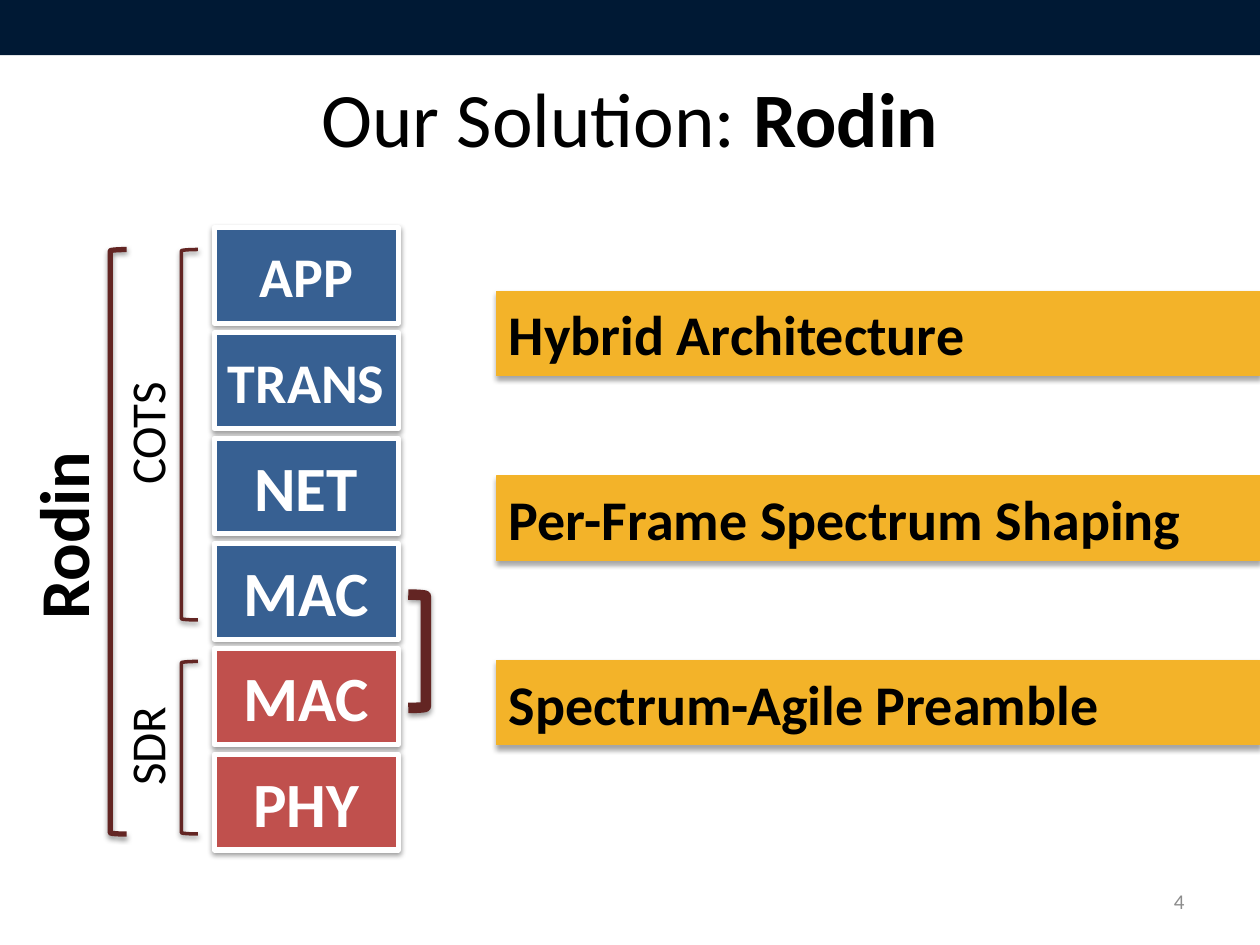
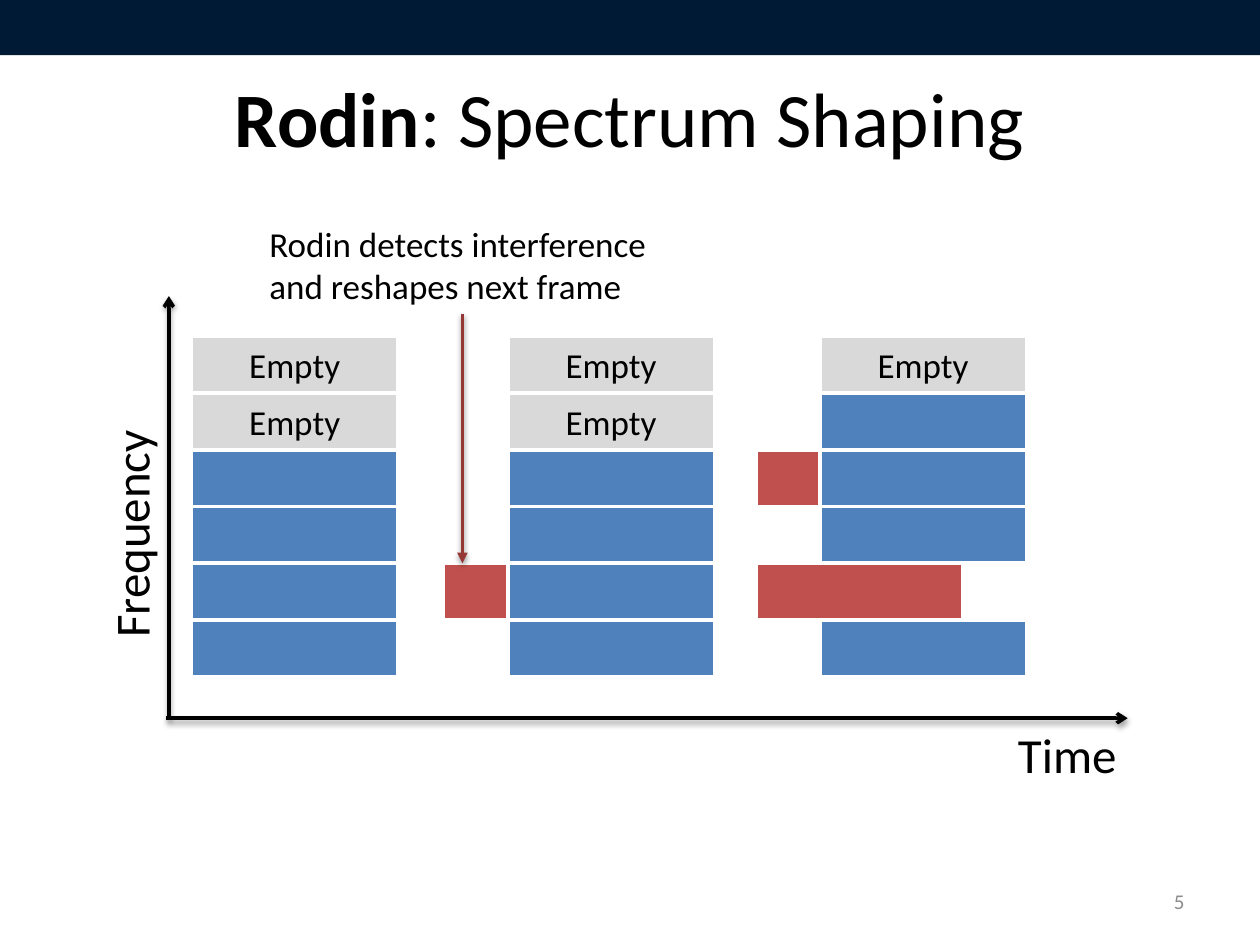
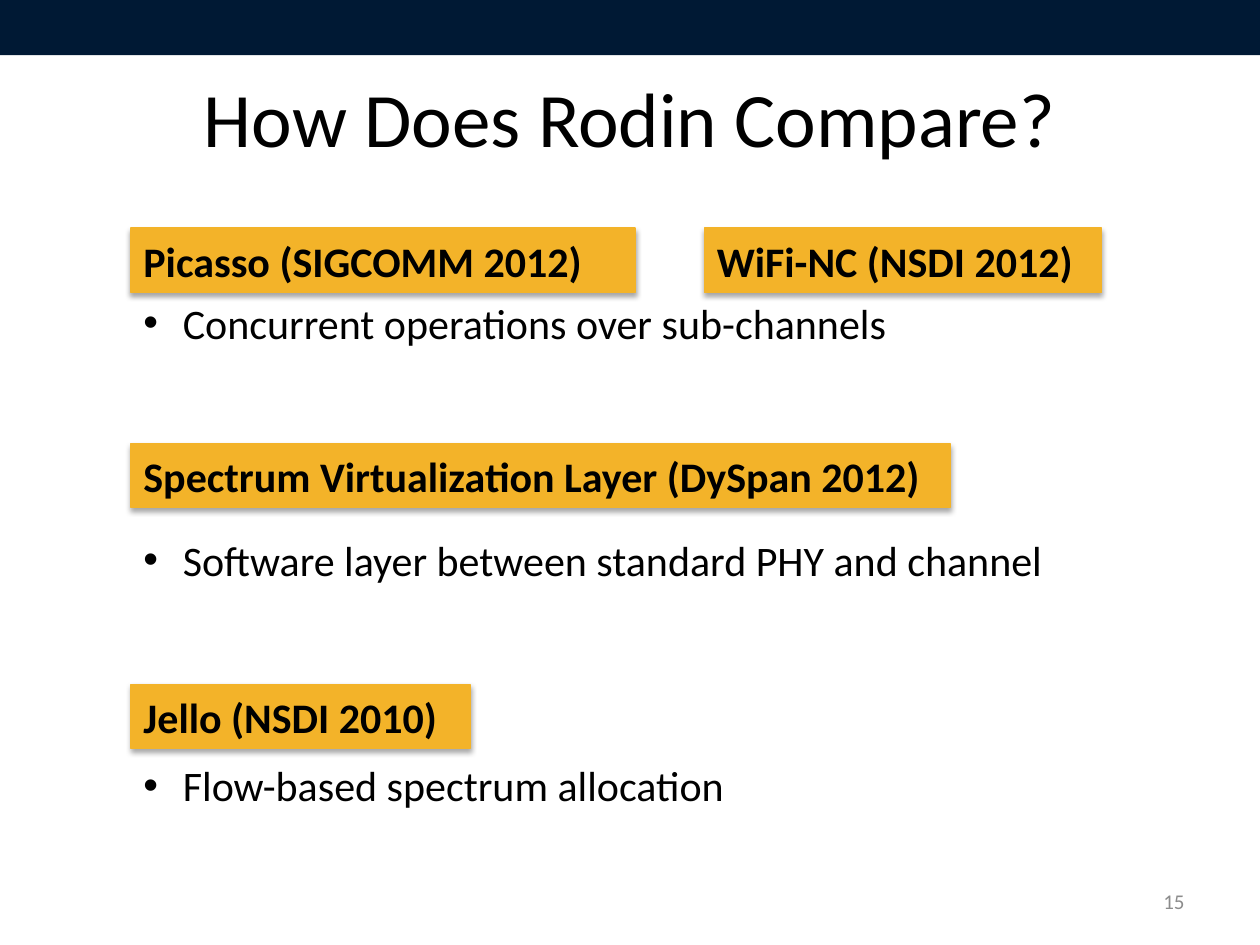
from lxml import etree
from pptx import Presentation
from pptx.dml.color import RGBColor
from pptx.enum import shapes, text
from pptx.oxml.ns import qn
from pptx.util import Pt

FONT = "Calibri"
BLACK, WHITE, GREY = "000000", "FFFFFF", "8C8C8C"
NAVY, GOLD, MAROON, ARROW_RED = "001934", "F3B329", "632523", "953735"
LAYER_BLUE, BLOCK_BLUE, RED, EMPTY_GREY = "376092", "4F81BD", "C0504D", "D9D9D9"
SHAPE = shapes.MSO_SHAPE
LEFT, CENTER, RIGHT = text.PP_ALIGN.LEFT, text.PP_ALIGN.CENTER, text.PP_ALIGN.RIGHT


def rgb(color):
    return RGBColor.from_string(color)


def style_runs(paragraph, size, color=BLACK, bold=False):
    for run in paragraph.runs:
        run.font.name = FONT
        run.font.size = Pt(size)
        run.font.bold = bold
        run.font.color.rgb = rgb(color)


def cast_shadow(item, opacity=38, distance=1.6):
    """Put a soft shadow straight below a shape or connector."""
    properties = item._element.spPr
    effects = properties.find(qn("a:effectLst"))
    if effects is None:
        effects = etree.SubElement(properties, qn("a:effectLst"))
    shadow = etree.SubElement(
        effects, qn("a:outerShdw"), blurRad=str(Pt(3.1)), dist=str(Pt(distance)),
        dir="5400000", rotWithShape="0")
    tint = etree.SubElement(shadow, qn("a:srgbClr"), val=BLACK)
    etree.SubElement(tint, qn("a:alpha"), val=str(opacity * 1000))


def add_outline(slide, kind, place, fill, line, weight):
    shape = slide.shapes.add_shape(kind, *map(Pt, place))
    shape.shadow.inherit = False
    if fill:
        shape.fill.solid()
        shape.fill.fore_color.rgb = rgb(fill)
    else:
        shape.fill.background()
    shape.line.color.rgb = rgb(line)
    shape.line.width = Pt(weight)
    return shape


def add_block(slide, place, fill, line=WHITE, weight=2, words="", size=20,
              color=BLACK, bold=False, align=CENTER):
    block = add_outline(slide, SHAPE.RECTANGLE, place, fill, line, weight)
    if words:
        block.text_frame.text = words
        paragraph = block.text_frame.paragraphs[0]
        paragraph.alignment = align
        style_runs(paragraph, size, color, bold)
    return block


def add_banner(slide, place, words, size):
    banner = add_block(slide, place, GOLD, GOLD, 0.75, words, size, bold=True, align=LEFT)
    cast_shadow(banner, 35, 1.8)


def add_bracket(slide, kind, place, weight):
    cast_shadow(add_outline(slide, kind, place, None, MAROON, weight))


def add_text(slide, place, words, size, color=BLACK, bold=False, align=LEFT,
             wrap=True, middle=False, rotation=0):
    box = slide.shapes.add_textbox(*map(Pt, place))
    box.rotation = rotation
    frame = box.text_frame
    frame.word_wrap = wrap
    if not wrap:
        frame.auto_size = text.MSO_AUTO_SIZE.SHAPE_TO_FIT_TEXT
    if middle:
        frame.vertical_anchor = text.MSO_ANCHOR.MIDDLE
    frame.text = words
    frame.paragraphs[0].alignment = align
    style_runs(frame.paragraphs[0], size, color, bold)
    return box


def add_label(slide, place, words, size=28, bold=False, rotation=270):
    add_text(slide, place, words, size, bold=bold, wrap=False, rotation=rotation)


def add_bullet(slide, place, words):
    paragraph = add_text(slide, place, words, 24).text_frame.paragraphs[0]
    properties = paragraph._p.get_or_add_pPr()
    properties.set("marL", str(Pt(22.5)))
    properties.set("indent", str(-Pt(22.5)))
    etree.SubElement(properties, qn("a:buFont"), typeface="Arial")
    etree.SubElement(properties, qn("a:buChar"), char="•")


def add_arrow(slide, start, end, color, head):
    arrow = slide.shapes.add_connector(
        shapes.MSO_CONNECTOR.STRAIGHT, *map(Pt, start + end))
    arrow.line.color.rgb = rgb(color)
    arrow.line.width = Pt(2)
    etree.SubElement(arrow._element.spPr.find(qn("a:ln")), qn("a:tailEnd"), type=head)
    cast_shadow(arrow)
    return arrow


def start_slide(deck, number, *title_parts):
    """Add a slide with band, title and number; title parts are (words, bold)."""
    slide = deck.slides.add_slide(deck.slide_layouts[6])
    band = add_block(slide, (0, 0, 720, 31.5), NAVY)
    band.line.fill.background()
    title = add_text(slide, (36, 21.6, 648, 90), "", 44, align=CENTER, middle=True)
    paragraph = title.text_frame.paragraphs[0]
    for words, _ in title_parts:
        paragraph.add_run().text = words
    style_runs(paragraph, 44)
    for run, (_, bold) in zip(paragraph.runs, title_parts):
        run.font.bold = bold
    add_text(slide, (516, 500.5, 168, 28.8), str(number), 12, GREY, align=RIGHT, middle=True)
    return slide


def build_solution(deck):
    slide = start_slide(deck, 4, ("Our Solution: ", False), ("Rodin", True))
    layers = [("APP", 32, LAYER_BLUE), ("TRANS", 32, LAYER_BLUE), ("NET", 36, LAYER_BLUE),
              ("MAC", 36, LAYER_BLUE), ("MAC", 36, RED), ("PHY", 36, RED)]
    for row, (name, size, fill) in enumerate(layers):
        layer = add_block(slide, (122.4, 130 + 60.2 * row, 105.2, 54.7), fill,
                          weight=3, words=name, size=size, color=WHITE, bold=True)
        cast_shadow(layer)

    for left, top, height, weight in [(63, 142.6, 334, 3), (103.7, 142.6, 211.7, 2),
                                      (103.7, 378, 98.6, 2)]:
        add_bracket(slide, SHAPE.LEFT_BRACKET, (left, top, 9.4, height), weight)
    add_bracket(slide, SHAPE.RIGHT_BRACKET, (233.3, 339.8, 10, 64.8), 6)
    add_label(slide, (45.4, 225.4, 76.3, 41), "COTS")
    add_label(slide, (52.6, 404.6, 61.9, 41), "SDR")
    add_label(slide, (-20.9, 277.2, 112.3, 55.4), "Rodin", 40, True)

    features = ["Hybrid Architecture", "Per-Frame Spectrum Shaping", "Spectrum-Agile Preamble"]
    for row, feature in enumerate(features):
        add_banner(slide, (283.7, 166.5 + 105.5 * row, 436.3, 48.2), feature, 32)


def build_shaping(deck):
    slide = start_slide(deck, 5, ("Rodin", True), (": Spectrum Shaping", False))

    def add_channel(left, row, fill, words=""):
        add_block(slide, (left, 192.24 + 32.4 * row, 118, 32.4), fill, words=words)

    for left, row in [(253.4, 4), (432, 2), (432, 4)]:
        add_channel(left, row, RED)
    # Each frame lists its channels from the top: E empty, U used, - left out
    frames = [(109.4, "EEUUUU"), (290.2, "EEUUUU"), (468.5, "EUUU-U")]
    for left, channels in frames:
        for row, state in enumerate(channels):
            if state == "E":
                add_channel(left, row, EMPTY_GREY, "Empty")
            elif state == "U":
                add_channel(left, row, BLOCK_BLUE)

    add_arrow(slide, (96.5, 410.4), (96.5, 169.2), BLACK, "arrow")
    add_arrow(slide, (95, 410.4), (644.4, 410.4), BLACK, "arrow")
    add_label(slide, (7.2, 283.7, 134.6, 41), "Frequency")
    add_label(slide, (574.6, 410.4, 72.7, 41), "Time", rotation=0)
    remark = add_text(slide, (146.9, 123.8, 234.7, 55.5),
                      "Rodin detects interference and reshapes next frame", 20)
    pointer = add_arrow(slide, (264.25, 179.3), (264.25, 321.84), ARROW_RED, "triangle")
    pointer.begin_connect(remark, 2)


def build_comparison(deck):
    slide = start_slide(deck, 15, ("How Does Rodin Compare?", False))
    left = 74.9
    systems = [("Picasso (SIGCOMM 2012)", left, 130.3, 288),
               ("WiFi-NC (NSDI 2012)", 402.5, 130.3, 226.8),
               ("Spectrum Virtualization Layer (DySpan 2012)", left, 253.4, 468),
               ("Jello (NSDI 2010)", left, 391, 193.7)]
    for name, start, top, width in systems:
        add_banner(slide, (start, top, width, 36.7), name, 24)
    traits = [("Concurrent operations over sub-channels", 166.3, 609),
              ("Software layer between standard PHY and channel", 301.7, 535),
              ("Flow-based spectrum allocation", 430.6, 350)]
    for trait, top, width in traits:
        add_bullet(slide, (left, top, width, 36), trait)


def main():
    deck = Presentation()
    deck.slide_width, deck.slide_height = Pt(720), Pt(540)
    build_solution(deck)
    build_shaping(deck)
    build_comparison(deck)
    deck.save("out.pptx")


if __name__ == "__main__":
    main()
